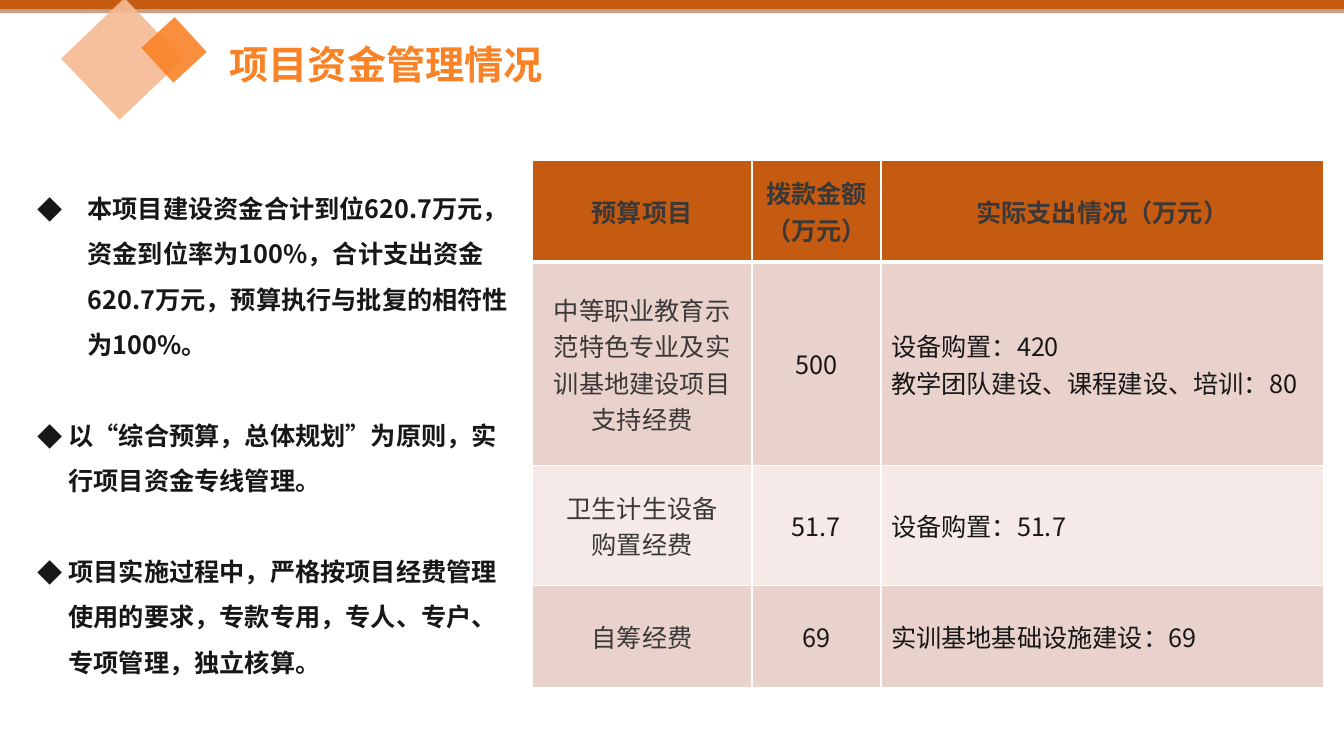
from dataclasses import dataclass

from lxml import etree
from pptx import Presentation
from pptx import util as u
from pptx.dml.color import RGBColor
from pptx.enum import shapes, text
from pptx.oxml import ns

WHITE = RGBColor(0xFF, 0xFF, 0xFF)
ORANGE = RGBColor(0xF9, 0x82, 0x27)
PEACH = RGBColor(0xF6, 0xBA, 0x92)
RUST = RGBColor(0xC5, 0x5A, 0x11)
BROWN = RGBColor(0x94, 0x43, 0x0D)
GREY = RGBColor(0x3B, 0x38, 0x38)
INK = RGBColor(0x18, 0x17, 0x17)
ROW_FILLS = (RGBColor(0xEA, 0xD2, 0xCC), RGBColor(0xF5, 0xEA, 0xE7))
CJK = "Noto Sans CJK SC"
WIDTH, HEIGHT = u.Inches(13.33), u.Inches(7.5)
BLANK_LINE = u.Pt(32.4)


@dataclass
class Box:
    """Left, top, width and height as percentages of the slide."""
    left: float
    top: float
    width: float
    height: float

    def emu(self) -> tuple:
        return (across(self.left), down(self.top),
                across(self.width), down(self.height))


@dataclass
class Ornament:
    box: Box
    color: RGBColor
    opacity: int = 100
    rotation: float = 0


@dataclass
class Bullet:
    words: str
    indent: float


def across(share: float) -> int:
    return round(WIDTH * share / 100)


def down(share: float) -> int:
    return round(HEIGHT * share / 100)


def sub(parent, tag: str, **attrs):
    return etree.SubElement(parent, ns.qn(tag), attrs)


def add_words(p, words: str, color: RGBColor, size: float = 18,
              bold: bool = False, name: str = CJK) -> None:
    r = p.add_run()
    r.text = words
    for key, value in dict(size=u.Pt(size), bold=bold, name=name).items():
        setattr(r.font, key, value)
    r.font.color.rgb = color
    sub(r.font._element, "a:ea", typeface=CJK)


def add_text_frame(slide, box: Box):
    tf = slide.shapes.add_textbox(*box.emu()).text_frame
    tf.word_wrap = True
    tf.auto_size = text.MSO_AUTO_SIZE.SHAPE_TO_FIT_TEXT
    return tf


def add_bullets(slide, box: Box, bullets: list[Bullet]) -> None:
    tf = add_text_frame(slide, box)
    for i, bullet in enumerate(bullets):
        p = tf.add_paragraph() if i else tf.paragraphs[0]
        p.line_spacing = 1.5
        if i:
            p.space_before = BLANK_LINE
        pPr = p._p.get_or_add_pPr()
        indent = u.Inches(bullet.indent)
        pPr.set("marL", str(indent))
        pPr.set("indent", str(-indent))
        sub(pPr, "a:buFont", typeface=CJK)
        sub(pPr, "a:buChar", char="◆")
        add_words(p, bullet.words, INK, bold=True)


def add_ornament(slide, item: Ornament) -> None:
    sp = slide.shapes.add_shape(shapes.MSO_SHAPE.RECTANGLE, *item.box.emu())
    sp.shadow.inherit = False
    sp.rotation = item.rotation
    sp.line.fill.background()
    sp.fill.solid()
    sp.fill.fore_color.rgb = item.color
    if item.opacity < 100:
        color = sp._element.spPr.find(".//" + ns.qn("a:srgbClr"))
        sub(color, "a:alpha", val=str(item.opacity * 1000))


def set_borders(cell, top: float, bottom: float) -> None:
    tcPr = cell._tc.get_or_add_tcPr()
    sides = {"a:lnL": 1, "a:lnR": 1, "a:lnT": top, "a:lnB": bottom}
    for tag, width in sides.items():
        ln = sub(tcPr, tag, w=str(u.Pt(width)))
        sub(sub(ln, "a:solidFill"), "a:srgbClr", val=str(WHITE))


def add_budget_table(slide, box: Box, cols: list[float], rows: list[float],
                     content: list[list[str]]) -> None:
    table = slide.shapes.add_table(len(rows), len(cols), *box.emu()).table
    for column, share in zip(table.columns, cols):
        column.width = across(share)
    for i, (row, share, words) in enumerate(zip(table.rows, rows, content)):
        row.height = down(share)
        header = i == 0
        for j, (cell, lines) in enumerate(zip(row.cells, words)):
            set_borders(cell, 3 if i == 1 else 1, 3 if header else 1)
            cell.fill.solid()
            cell.fill.fore_color.rgb = RUST if header else ROW_FILLS[(i - 1) % 2]
            cell.vertical_anchor = text.MSO_ANCHOR.MIDDLE
            tf = cell.text_frame
            for k, line in enumerate(lines.split("\n")):
                p = tf.add_paragraph() if k else tf.paragraphs[0]
                centred = header or j < 2
                p.alignment = text.PP_ALIGN.CENTER if centred else text.PP_ALIGN.LEFT
                add_words(p, line, GREY if header or j == 0 else INK, bold=header)


BUDGET = [
    ["预算项目", "拨款金额\n（万元）", "实际支出情况（万元）"],
    ["中等职业教育示范特色专业及实训基地建设项目支持经费", "500",
     "设备购置：420\n教学团队建设、课程建设、培训：80"],
    ["卫生计生设备\n购置经费", "51.7", "设备购置：51.7"],
    ["自筹经费", "69", "实训基地基础设施建设：69"],
]
BULLETS = [
    Bullet("本项目建设资金合计到位620.7万元，资金到位率为100%，合计支出资金620.7万元，"
           "预算执行与批复的相符性为100%。", 0.5),
    Bullet("以“综合预算，总体规划”为原则，实行项目资金专线管理。", 0.31),
    Bullet("项目实施过程中，严格按项目经费管理使用的要求，专款专用，专人、专户、"
           "专项管理，独立核算。", 0.31),
]
ORNAMENTS = [
    Ornament(Box(0, 0.53, 100, 1.2), BROWN, 50),
    Ornament(Box(0, 0, 100, 1.2), RUST),
    Ornament(Box(5.93, 2, 6.3, 11.6), PEACH, 90, 46.3),
    Ornament(Box(11.18, 3.6, 3.53, 6), ORANGE, 90, 47.3),
]


def main() -> None:
    prs = Presentation()
    prs.slide_width, prs.slide_height = WIDTH, HEIGHT
    slide = prs.slides.add_slide(prs.slide_layouts[6])

    # Title
    p = add_text_frame(slide, Box(16.35, 3.87, 36.98, 8)).paragraphs[0]
    p.line_spacing = 1.14
    add_words(p, "项目资金管理情况", ORANGE, 28, True, "Arial")

    # Budget table and key points
    add_budget_table(slide, Box(39.6, 21.2, 58.88, 69.74),
                     [16.35, 9.6, 32.93], [13.47, 26.93, 15.87, 13.47], BUDGET)
    add_bullets(slide, Box(2.03, 22.93, 36.6, 68), BULLETS)

    # Top bars and diamonds
    for item in ORNAMENTS:
        add_ornament(slide, item)

    prs.save("out.pptx")


if __name__ == "__main__":
    main()
